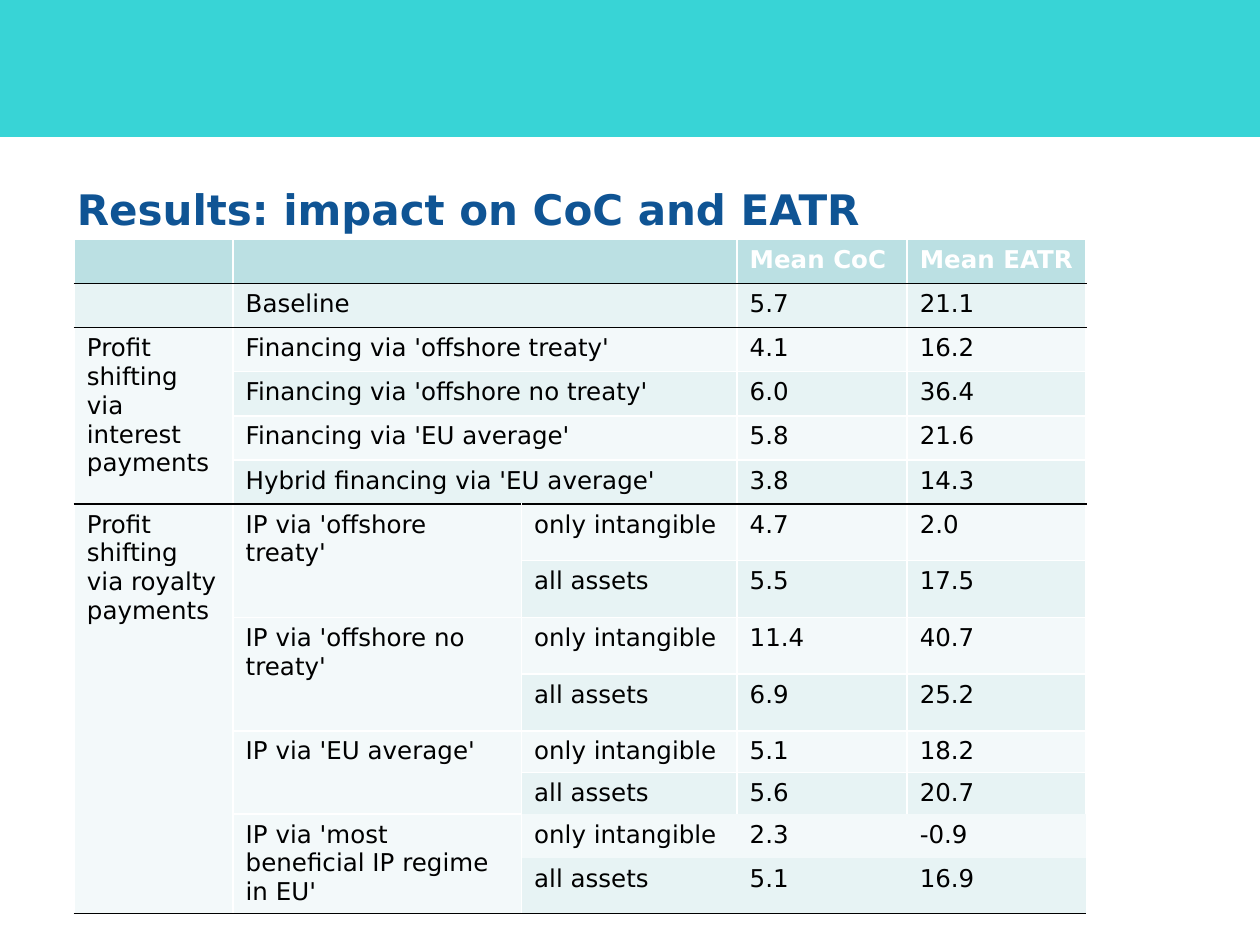
from lxml.etree import SubElement
from pptx import Presentation
from pptx.dml.color import RGBColor
from pptx.enum.shapes import MSO_SHAPE
from pptx.enum.text import MSO_ANCHOR, PP_ALIGN
from pptx.oxml.ns import qn
from pptx.util import Inches, Pt

# Content: LEFT and UP mark cells that join their neighbour
LEFT, UP = "<", "^"
TITLE = "Results: impact on CoC and EATR"
ROWS = [
    ("", "", LEFT, "Mean CoC", "Mean EATR"),
    ("", "Baseline", LEFT, "5.7", "21.1"),
    ("Profit shifting via interest payments",
     "Financing via 'offshore treaty'", LEFT, "4.1", "16.2"),
    (UP, "Financing via 'offshore no treaty'", LEFT, "6.0", "36.4"),
    (UP, "Financing via 'EU average'", LEFT, "5.8", "21.6"),
    (UP, "Hybrid financing via 'EU average'", LEFT, "3.8", "14.3"),
    ("Profit shifting via royalty payments",
     "IP via 'offshore treaty'", "only intangible", "4.7", "2.0"),
    (UP, UP, "all assets", "5.5", "17.5"),
    (UP, "IP via 'offshore no treaty'", "only intangible", "11.4", "40.7"),
    (UP, UP, "all assets", "6.9", "25.2"),
    (UP, "IP via 'EU average'", "only intangible", "5.1", "18.2"),
    (UP, UP, "all assets", "5.6", "20.7"),
    (UP, "IP via 'most beneficial IP regime in EU'",
     "only intangible", "2.3", "-0.9"),
    (UP, UP, "all assets", "5.1", "16.9"),
]
WIDTHS = [1.26, 2.29, 1.71, 1.35, 1.42]
HEIGHTS = [0.35] * 6 + [0.45] * 4 + [0.33] * 2 + [0.35, 0.44]
RULED = {0, 1, 5, 13}  # rows with a black line below
OPEN = 12              # from this row on, values have no grid

THEME = {
    "font": "DejaVu Sans", "title": 24, "cell": 14,
    "band": "38D4D6", "blue": "0F5494", "head": "BBE0E3",
    "odd": "E7F3F4", "even": "F3F9FA", "ink": "000000", "white": "FFFFFF",
}


def color(key):
    return RGBColor.from_string(THEME[key])


def style(run, size, ink, bold):
    look = {"name": THEME["font"], "size": Pt(THEME[size]), "bold": bold}
    for key, value in look.items():
        setattr(run.font, key, value)
    run.font.color.rgb = color(ink)


def span(row, col):
    """Count the rows and columns that a cell covers."""
    down = 1
    while row + down < len(ROWS) and ROWS[row + down][col] == UP:
        down += 1
    wide = 2 if ROWS[row][col + 1:col + 2] == (LEFT,) else 1
    return down, wide


def edges(row, col, last):
    """Pick a line colour, or None, for each side of a cell."""
    bare = row >= OPEN and col >= 2
    lines = {
        "L": None if bare and col > 2 else "white",
        "R": None if bare or row >= OPEN else "white",
        "T": None if bare else "white",
        "B": None if bare or (row == OPEN - 1 and col >= 2) else "white",
    }
    if row - 1 in RULED:
        lines["T"] = "ink"
    if last in RULED:
        lines["B"] = "ink"
    return lines


def border(cell, lines):
    props = cell._tc.get_or_add_tcPr()
    for side, key in lines.items():
        line = SubElement(props, qn("a:ln" + side), w=str(Pt(1)))
        if key is None:
            SubElement(line, qn("a:noFill"))
        else:
            fill = SubElement(line, qn("a:solidFill"))
            SubElement(fill, qn("a:srgbClr"), val=THEME[key])


def fill_table(table):
    for items, sizes, side in ((table.columns, WIDTHS, "width"),
                               (table.rows, HEIGHTS, "height")):
        for item, size in zip(items, sizes):
            setattr(item, side, Inches(size))
    for row, texts in enumerate(ROWS):
        for col, text in enumerate(texts):
            cell = table.cell(row, col)
            para = cell.text_frame.paragraphs[0]
            joined = text in (LEFT, UP)
            down, wide = (1, 1) if joined else span(row, col)
            border(cell, edges(row, col, row + down - 1))
            cell.fill.solid()
            cell.fill.fore_color.rgb = color(
                "head" if row == 0 else "odd" if row % 2 else "even")
            if text and not joined:
                run = para.add_run()
                run.text = text
                style(run, "cell", "ink" if row else "white", row == 0)
            else:
                # Keep empty cells at the table's type size
                SubElement(para._p, qn("a:endParaRPr"),
                           sz=str(THEME["cell"] * 100))
            if down * wide > 1:
                cell.merge(table.cell(row + down - 1, col + wide - 1))


def main():
    deck = Presentation()
    deck.slide_width, deck.slide_height = Inches(10), Inches(7.5)
    slide = deck.slides.add_slide(deck.slide_layouts[5])

    # Top band
    band = slide.shapes.add_shape(
        MSO_SHAPE.RECTANGLE, 0, 0, Inches(10), Inches(1.08))
    band.shadow.inherit = False
    band.fill.solid()
    band.fill.fore_color.rgb = band.line.color.rgb = color("band")
    band.line.width = Pt(0.75)

    # Title
    title = slide.shapes.title
    place = {"left": 0.51, "top": 1.15, "width": 9, "height": 1.02}
    for key, value in place.items():
        setattr(title, key, Inches(value))
    title.text_frame.vertical_anchor = MSO_ANCHOR.MIDDLE
    para = title.text_frame.paragraphs[0]
    para.alignment = PP_ALIGN.LEFT
    run = para.add_run()
    run.text = TITLE
    style(run, "title", "blue", True)

    # Results table
    frame = slide.shapes.add_table(
        len(ROWS), len(WIDTHS), Inches(0.59), Inches(1.9),
        Inches(sum(WIDTHS)), Inches(sum(HEIGHTS)))
    frame.table.horz_banding = False
    fill_table(frame.table)

    deck.save("out.pptx")


if __name__ == "__main__":
    main()
